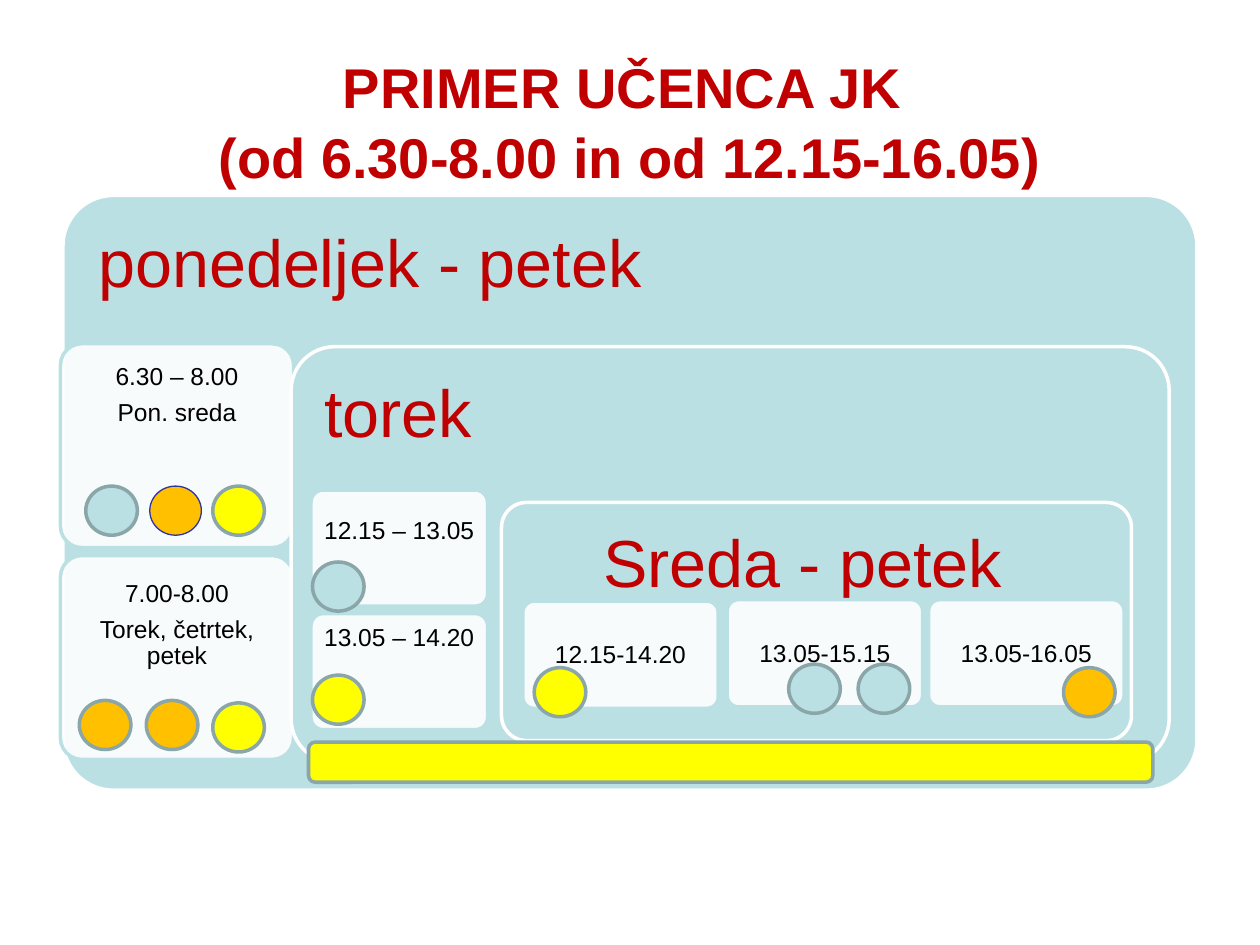
from lxml import etree
from pptx import Presentation
from pptx.dml.color import RGBColor
from pptx.enum.shapes import MSO_SHAPE
from pptx.enum.text import MSO_ANCHOR, MSO_AUTO_SIZE, PP_ALIGN
from pptx.oxml.ns import qn
from pptx.util import Cm, Pt

ROUND, OVAL = MSO_SHAPE.ROUNDED_RECTANGLE, MSO_SHAPE.OVAL
LEFT, CENTER = PP_ALIGN.LEFT, PP_ALIGN.CENTER
TOP, MIDDLE = MSO_ANCHOR.TOP, MSO_ANCHOR.MIDDLE

COLORS = {"red": "C00000", "black": "000000", "white": "FFFFFF", "teal": "BBE0E3",
          "edge": "8AA6A8", "orange": "FFC000", "yellow": "FFFF00", "navy": "333399"}
FONT = "Arial"

TITLE = "PRIMER UČENCA JK \v(od 6.30-8.00 in od 12.15-16.05)"

# Nested panels, all lengths in cm. Card: left, top, space above text, lines
LEVELS = [
    {"heading": "ponedeljek - petek", "box": (1.27, 3.94, 22.86, 11.99),
     "corner": 0.085, "indent": 0.41, "card_size": (4.7, 4.11),
     "cards": [(1.22, 6.93, 0.29, ["6.30 – 8.00", "Pon. sreda"]),
               (1.22, 11.2, 0.39, ["7.00-8.00", "Torek, četrtek, petek"])]},
    {"heading": "torek", "box": (5.87, 6.99, 17.7, 8.38),
     "corner": 0.105, "indent": 0.41, "card_size": (3.56, 2.34),
     "cards": [(6.27, 9.88, 0.5, ["12.15 – 13.05"]),
               (6.27, 12.37, 0.17, ["13.05 – 14.20"])]},
    {"heading": "Sreda - petek", "box": (10.11, 10.13, 12.7, 4.8),
     "corner": 0.105, "indent": 1.9, "card_size": (3.94, 2.16),
     "cards": [(10.54, 12.12, 0.77, ["12.15-14.20"]),
               (14.66, 12.09, 0.77, ["13.05-15.15"]),
               (18.72, 12.09, 0.77, ["13.05-16.05"])]},
]

DOT_SIZE = (1.04, 0.99)
DOTS = [  # left, top, fill
    (1.73, 9.8, "teal"), (3.02, 9.8, "orange"), (4.29, 9.8, "yellow"),
    (1.6, 14.12, "orange"), (2.95, 14.12, "orange"), (4.29, 14.17, "yellow"),
    (6.3, 11.33, "teal"), (6.3, 13.61, "yellow"), (10.77, 13.46, "yellow"),
    (15.9, 13.39, "teal"), (17.3, 13.39, "teal"), (21.44, 13.46, "orange"),
]
THIN_DOT = DOTS[1]
BAR = (6.22, 14.96, 17.02, 0.81)


def rgb(name):
    return RGBColor.from_string(COLORS[name])


def write(tf, lines, size, color, bold=False, align=CENTER, anchor=TOP,
          spacing=0.9, after=0, insets=(0.15, 0.15, 0.15, 0.15)):
    tf.word_wrap = True
    tf.auto_size = MSO_AUTO_SIZE.NONE
    tf.vertical_anchor = anchor
    tf.margin_left, tf.margin_top, tf.margin_right, tf.margin_bottom = map(Cm, insets)
    for i, line in enumerate(lines):
        p = tf.paragraphs[0] if i == 0 else tf.add_paragraph()
        p.text = line
        p.alignment = align
        p.line_spacing = spacing
        p.space_before, p.space_after = Pt(0), Pt(after)
        for r in p.runs:
            r.font.name, r.font.size, r.font.bold = FONT, Pt(size), bold
            r.font.color.rgb = rgb(color)


def add_box(s, kind, box, fill, line, width=2, corner=None, alpha=None):
    """Add a preset shape; alpha is the opacity of its fill in percent."""
    sp = s.shapes.add_shape(kind, *map(Cm, box))
    sp.shadow.inherit = False
    sp.fill.solid()
    sp.fill.fore_color.rgb = rgb(fill)
    sp.line.color.rgb = rgb(line)
    sp.line.width = Pt(width)
    if corner is not None:
        sp.adjustments[0] = corner
    if alpha is not None:
        clr = sp.fill._xPr.find(qn("a:solidFill"))[0]
        etree.SubElement(clr, qn("a:alpha")).set("val", str(alpha * 1000))
    return sp


def add_level(s, level):
    panel = add_box(s, ROUND, level["box"], "teal", "white", corner=level["corner"])
    write(panel.text_frame, [level["heading"]], 38, "red", align=LEFT,
          insets=(level["indent"], 0.41, 0.41, 0.41))
    for left, top, above, lines in level["cards"]:
        card = add_box(s, ROUND, (left, top, *level["card_size"]), "white", "teal",
                       corner=0.105, alpha=90)
        write(card.text_frame, lines, 14, "black", after=5.5,
              insets=(0.15, above, 0.15, 0.15))


def main():
    prs = Presentation()
    prs.slide_width, prs.slide_height = Cm(25.4), Cm(19.05)
    s = prs.slides.add_slide(prs.slide_layouts[5])

    title = s.shapes.title
    title.left, title.top, title.width, title.height = map(Cm, (1.27, 0.76, 22.86, 3.18))
    write(title.text_frame, [TITLE], 32, "red", bold=True, anchor=MIDDLE,
          spacing=1.04, insets=(0.25, 0.25, 0.25, 0.13))

    for level in LEVELS:
        add_level(s, level)
    for dot in DOTS:
        left, top, fill = dot
        line, width = ("navy", 0.75) if dot is THIN_DOT else ("edge", 2)
        add_box(s, OVAL, (left, top, *DOT_SIZE), fill, line, width)
    add_box(s, ROUND, BAR, "yellow", "edge")

    prs.save("out.pptx")


if __name__ == "__main__":
    main()
